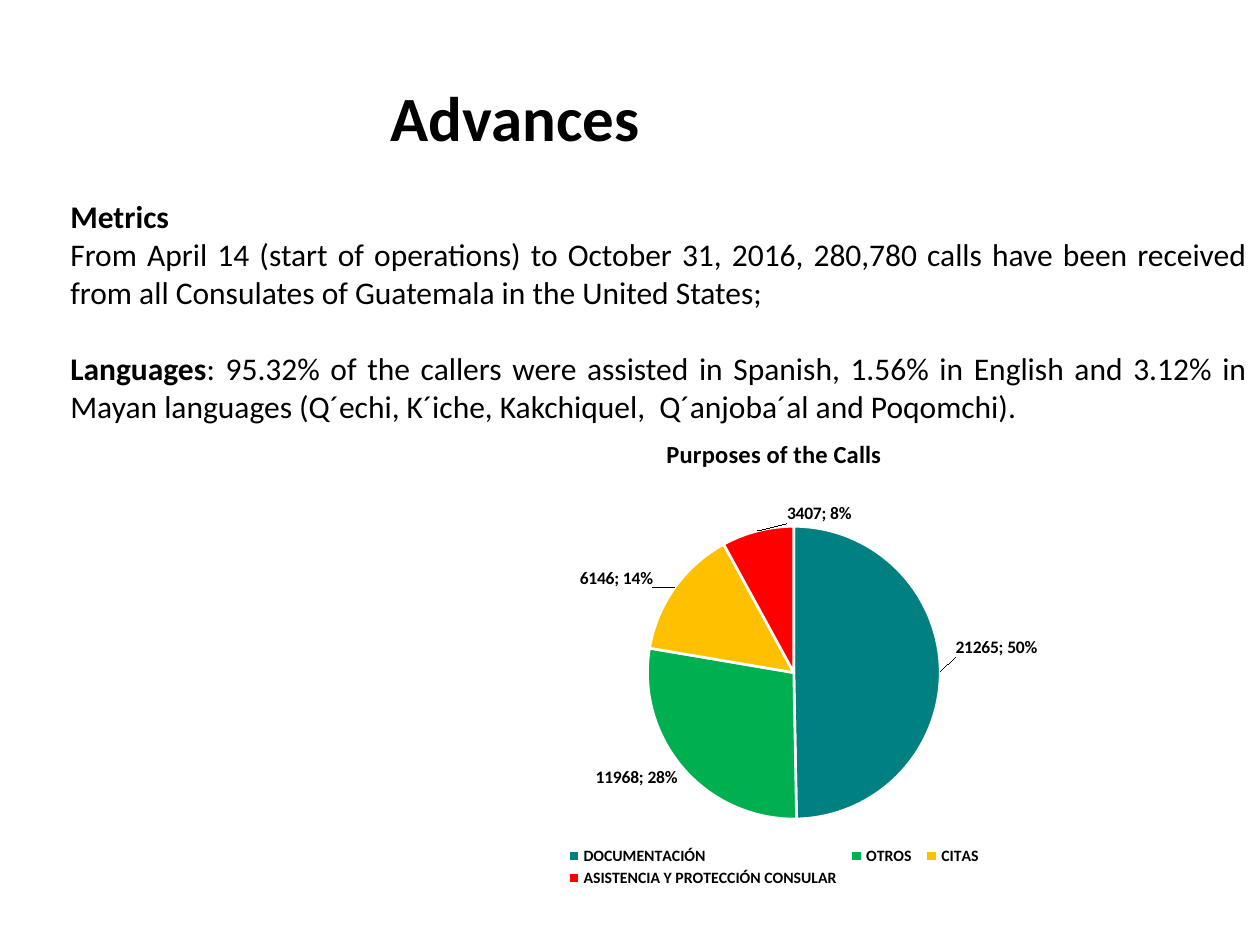
from lxml import etree
from pptx import Presentation
from pptx import util as u
from pptx.chart.data import CategoryChartData
from pptx.dml.color import RGBColor
from pptx.enum import chart as charts, text
from pptx.oxml import ns

PX = 914400 // 126
BLACK = "000000"


def style(font, size, color=BLACK, bold=True):
    font.name = "Calibri"
    font.size = u.Pt(size)
    font.bold = bold
    font.color.rgb = RGBColor.from_string(color)


def add_text(box, paragraphs, size, align, gaps=None):
    """Fill a text box; paragraphs are lists of (text, bold), gaps maps index to space before."""
    frame = slide.shapes.add_textbox(*[v * PX for v in box]).text_frame
    frame.word_wrap = True
    for i, runs in enumerate(paragraphs):
        paragraph = frame.paragraphs[0] if i == 0 else frame.add_paragraph()
        paragraph.alignment = align
        if gaps and i in gaps:
            paragraph.space_before = u.Pt(gaps[i])
        for words, bold in runs:
            run = paragraph.add_run()
            run.text = words
            style(run.font, size, bold=bold)


presentation = Presentation()
presentation.slide_width = 1260 * PX
presentation.slide_height = 945 * PX
slide = presentation.slides.add_slide(presentation.slide_layouts[6])

add_text((353, 72, 324, 89), [[("Advances", True)]], 36, text.PP_ALIGN.CENTER)
add_text((58, 191, 1202, 240), [
    [("Metrics", True)],
    [("From April 14 (start of operations) to October 31, 2016, 280,780 calls have been "
      "received from all Consulates of Guatemala in the United States;", False)],
    [("Languages", True),
     (": 95.32% of the callers were assisted in Spanish, 1.56% in English and 3.12% in Mayan "
      "languages (Q´echi, K´iche, Kakchiquel,  Q´anjoba´al and Poqomchi).", False)],
], 18, text.PP_ALIGN.JUSTIFY, gaps={2: 22})

# category, calls, colour, label shift as a share of the chart
purposes = [
    ("DOCUMENTACIÓN", 21265, "008080", (0.01, -0.05)),
    ("OTROS", 11968, "00B050", (0, -0.01)),
    ("CITAS", 6146, "FFC000", (-0.02, 0.01)),
    ("ASISTENCIA Y PROTECCIÓN CONSULAR", 3407, "FF0000", (0.12, 0)),
]
data = CategoryChartData()
data.categories = [purpose[0] for purpose in purposes]
data.add_series("Series 1", [purpose[1] for purpose in purposes])
chart = slide.shapes.add_chart(
    charts.XL_CHART_TYPE.PIE, 376 * PX, 416 * PX, 796 * PX, 480 * PX, data).chart
style(chart.font, 10, bold=False)

chart.has_title = True
title = chart.chart_title.text_frame
title.text = "Purposes of the Calls"
style(title.paragraphs[0].runs[0].font, 14)

chart.has_legend = True
chart.legend.position = charts.XL_LEGEND_POSITION.BOTTOM
chart.legend.include_in_layout = False
style(chart.legend.font, 9)


def manual_layout(**values):
    """Return a c:layout element holding the given manual settings."""
    layout = etree.Element(ns.qn("c:layout"))
    manual = etree.SubElement(layout, ns.qn("c:manualLayout"))
    for name, value in values.items():
        etree.SubElement(manual, ns.qn(f"c:{name}")).set("val", str(value))
    return layout


plot_area = chart._chartSpace.chart.plotArea
for old in plot_area.findall(ns.qn("c:layout")):
    plot_area.remove(old)
plot_area.insert(0, manual_layout(
    layoutTarget="inner", xMode="edge", yMode="edge", x=0.34, y=0.23, w=0.37, h=0.61))
legend = chart.legend._element
for old in legend.findall(ns.qn("c:layout")):
    legend.remove(old)
legend.find(ns.qn("c:legendPos")).addnext(manual_layout(
    xMode="edge", yMode="edge", x=0.23, y=0.89, w=0.54, h=0.1))

plot = chart.plots[0]
plot.vary_by_categories = True
series = plot.series[0]
labels = series.data_labels
labels.show_value = labels.show_percentage = True
labels.position = charts.XL_LABEL_POSITION.OUTSIDE_END
style(labels.font, 10)

for i, (_, _, color, (dx, dy)) in enumerate(purposes):
    point = series.points[i]
    point.format.fill.solid()
    point.format.fill.fore_color.rgb = RGBColor.from_string(color)
    point.format.line.color.rgb = RGBColor.from_string("FFFFFF")
    point.format.line.width = u.Pt(1.5)
    point.data_label.position = charts.XL_LABEL_POSITION.OUTSIDE_END
    style(point.data_label.font, 10)
    label = labels._element.findall(ns.qn("c:dLbl"))[i]
    label.find(ns.qn("c:idx")).addnext(manual_layout(x=dx, y=dy))
    label.find(ns.qn("c:showPercent")).set("val", "1")

for shown in labels._element.iter(ns.qn("c:showBubbleSize")):
    separator = etree.Element(ns.qn("c:separator"))
    separator.text = "; "
    shown.addnext(separator)

presentation.save("out.pptx")
